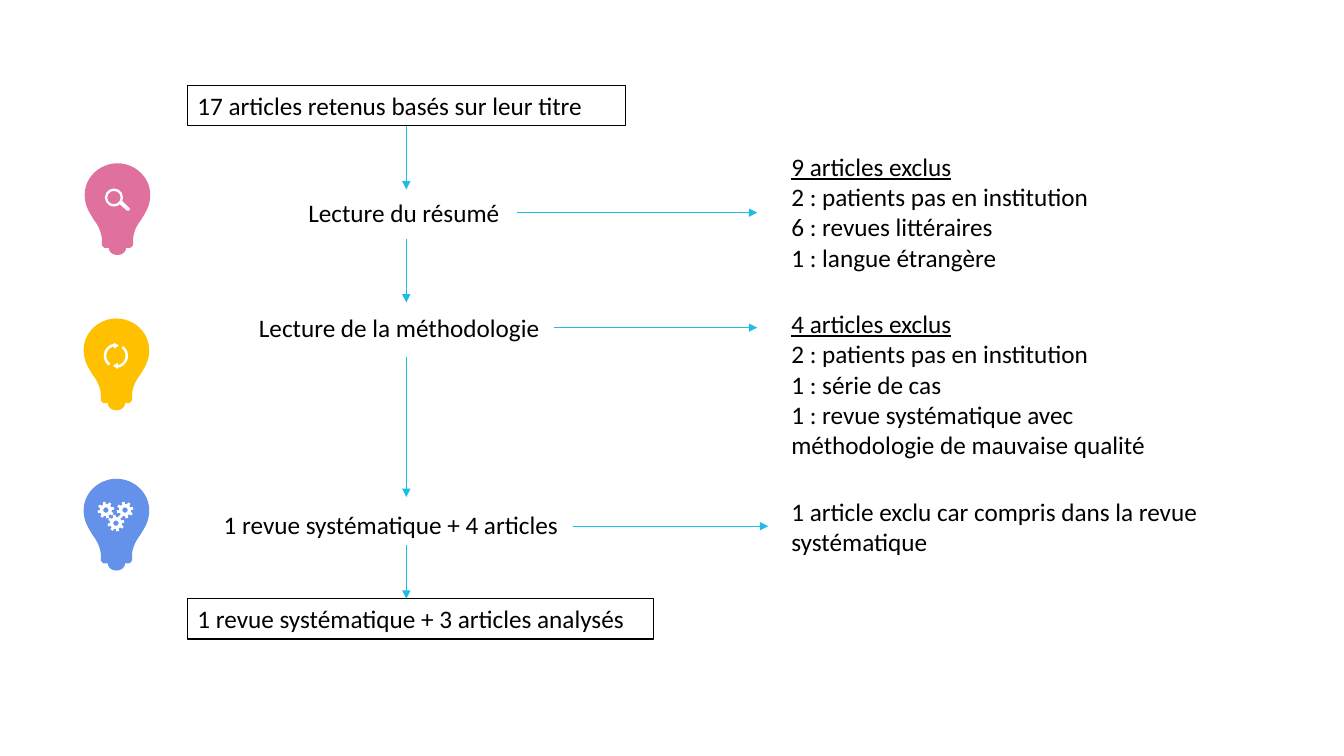
from dataclasses import dataclass
from math import cos, pi, radians, sin

from lxml import etree
from pptx import Presentation
from pptx import util as u
from pptx.dml.color import RGBColor
from pptx.enum import shapes, text
from pptx.oxml.ns import qn

PX = u.Inches(1) // 100


@dataclass(frozen=True)
class Theme:
    font: str = "Calibri"
    size: int = 18
    line_width: float = 0.75
    ink: str = "000000"
    arrow: str = "1CBEE4"
    icon: str = "FFFFFF"
    summary: str = "E0719E"
    method: str = "FFC000"
    result: str = "6491E9"


THEME = Theme()
RECTANGLE = shapes.MSO_SHAPE.RECTANGLE


def px(*lengths):
    return [u.Emu(round(length * PX)) for length in lengths]


def paint(shape, color):
    shape.shadow.inherit = False
    shape.fill.solid()
    shape.fill.fore_color.rgb = RGBColor.from_string(color)
    shape.line.fill.background()


def write(shape, wording, heading=False):
    """Fill a shape with left-aligned lines, underlining the first if it is a heading."""
    frame = shape.text_frame
    frame.word_wrap = True
    frame.auto_size = text.MSO_AUTO_SIZE.SHAPE_TO_FIT_TEXT
    frame.vertical_anchor = text.MSO_ANCHOR.TOP
    frame.text = wording
    for index, paragraph in enumerate(frame.paragraphs):
        paragraph.alignment = text.PP_ALIGN.LEFT
        for run in paragraph.runs:
            run.font.name = THEME.font
            run.font.size = u.Pt(THEME.size)
            run.font.color.rgb = RGBColor.from_string(THEME.ink)
            if heading and index == 0:
                run.font.underline = True


def add_label(slide, box, wording, heading=False):
    label = slide.shapes.add_textbox(*px(*box))
    write(label, wording, heading)
    return label


def add_framed_label(slide, box, wording):
    frame = slide.shapes.add_shape(RECTANGLE, *px(*box))
    frame.shadow.inherit = False
    frame.fill.background()
    frame.line.color.rgb = RGBColor.from_string(THEME.ink)
    frame.line.width = u.Pt(THEME.line_width)
    write(frame, wording)
    return frame


def add_arrow(slide, start, end, source=None, side=0):
    arrow = slide.shapes.add_connector(shapes.MSO_CONNECTOR.STRAIGHT, *px(*start, *end))
    if source is not None:
        arrow.begin_connect(source, side)
    arrow.line.color.rgb = RGBColor.from_string(THEME.arrow)
    arrow.line.width = u.Pt(THEME.line_width)
    etree.SubElement(arrow.line._get_or_add_ln(), qn("a:tailEnd"), type="triangle")
    etree.SubElement(arrow._element.spPr, qn("a:effectLst"))


def add_outline(parts, contours, color):
    """Draw closed contours as one shape; an inner contour cuts a hole."""
    contours = [[px(*point) for point in contour] for contour in contours]
    builder = parts.build_freeform(*contours[0][0])
    for index, contour in enumerate(contours):
        if index:
            builder.move_to(*contour[0])
        builder.add_line_segments(contour[1:], close=True)
    paint(builder.convert_to_shape(), color)


def curve(start, *triples, steps=12):
    """Sample a chain of cubic curves, each given as two controls and an end."""
    points = [start]
    for a, b, end in triples:
        for step in range(1, steps + 1):
            t = step / steps
            weights = ((1 - t) ** 3, 3 * t * (1 - t) ** 2, 3 * t * t * (1 - t), t ** 3)
            points.append(tuple(sum(w * p[axis] for w, p in zip(weights, (start, a, b, end)))
                                for axis in (0, 1)))
        start = end
    return points


def polar(cx, cy, radius, degrees):
    return cx + radius * cos(radians(degrees)), cy - radius * sin(radians(degrees))


def arc(cx, cy, radius, first, last, steps=24):
    return [polar(cx, cy, radius, first + (last - first) * n / steps) for n in range(steps + 1)]


def add_magnifier(slide, cx, cy):
    group = slide.shapes.add_group_shape()
    lens = group.shapes.add_shape(shapes.MSO_SHAPE.DONUT, *px(cx - 12, cy - 12, 18, 18))
    lens.adjustments[0] = 0.13
    paint(lens, THEME.icon)
    handle = [(4, 0), (2, 3), (10, 10), (12, 10), (13, 8), (5, 0)]
    add_outline(group.shapes, [[(cx + x, cy + y) for x, y in handle]], THEME.icon)


def add_cycle(slide, cx, cy):
    contours = []
    for turn in (0, 180):
        contours.append(arc(cx, cy, 12, 102 + turn, 234 + turn)
                        + arc(cx, cy, 9.5, 234 + turn, 102 + turn))
        sign = 1 if turn == 0 else -1
        contours.append([(cx + sign * x, cy + sign * y) for x, y in ((-2, -13), (-2, -7), (3, -10))])
    add_outline(slide.shapes, contours, THEME.icon)


def add_gears(slide, cx, cy, teeth=8):
    group = slide.shapes.add_group_shape()
    pitch = 360 / teeth
    for dx, dy in ((9, -6), (-10, -6), (0, 7)):
        x, y = cx + dx, cy + dy
        rim = [polar(x, y, radius, pitch * (tooth + share))
               for tooth in range(teeth)
               for radius, share in ((6, 0), (8.3, 0.08), (8.3, 0.5), (6, 0.58))]
        add_outline(group.shapes, [rim, arc(x, y, 2.6, 0, 345)], THEME.icon)


def add_bulb(slide, left, top, color, add_icon):
    middle = 32.5
    glass = curve((middle, 0), ((15, 0), (0, 14), (0, 31)),
                  ((0, 43), (5, 49), (9, 56)), ((13, 61), (16, 67), (17, 74)))
    cap = ([(17, 73)] + curve((17, 80), ((17, 82), (19, 84), (21, 84)))
           + curve((24, 84), ((24, 88), (28, 91), (middle, 91))))
    for half in (glass, cap):
        mirrored = [(2 * middle - x, y) for x, y in reversed(half)]
        add_outline(slide.shapes, [[(left + x, top + y) for x, y in half + mirrored]], color)
    add_icon(slide, left + 32, top + 37)


def add_selection_flow(slide, left, top):
    """Place the reading steps and the arrows that run down between them."""
    first = add_framed_label(slide, (left, top, 434, 40), "17 articles retenus basés sur leur titre")
    steps = [add_label(slide, (left + dx, top + dy, width, 40), wording)
             for dx, dy, width, wording in (
                 (110, 106, 217, "Lecture du résumé"),
                 (61, 220, 316, "Lecture de la méthodologie"),
                 (26, 415, 385, "1 revue systématique + 4 articles"))]
    add_framed_label(slide, (left, top + 509, 462, 40), "1 revue systématique + 3 articles analysés")
    axis = left + 217
    for start, end, source in ((40, 103, first), (152, 215, None),
                               (269, 408, None), (456, 509, None)):
        add_arrow(slide, (axis, top + start), (axis, top + end), source, 2)
    return steps


def add_exclusions(slide, left, top, summary_step):
    """Place the exclusion notes and the arrows that lead to them."""
    for dy, height, heading, wording in (
            (0, 131, True, "9 articles exclus\n2 : patients pas en institution\n"
                           "6 : revues littéraires\n1 : langue étrangère"),
            (156, 162, True, "4 articles exclus\n2 : patients pas en institution\n1 : série de cas\n"
                             "1 : revue systématique avec méthodologie de mauvaise qualité"),
            (342, 71, False, "1 article exclu car compris dans la revue systématique")):
        add_label(slide, (left, top + dy, 431, height), wording, heading)
    for start, end, dy, source in ((-262, -24, 66, summary_step), (-226, -24, 180, None),
                                   (-207, -13, 377, None)):
        add_arrow(slide, (left + start, top + dy), (left + end, top + dy), source, 3)


def main():
    deck = Presentation()
    deck.slide_width, deck.slide_height = px(1333, 750)
    slide = deck.slides.add_slide(deck.slide_layouts[6])
    steps = add_selection_flow(slide, 186, 85)
    add_exclusions(slide, 775, 145, steps[0])
    for left, top, color, icon in ((84, 162, THEME.summary, add_magnifier),
                                   (83, 316, THEME.method, add_cycle),
                                   (83, 475, THEME.result, add_gears)):
        add_bulb(slide, left, top, color, icon)
    deck.save("out.pptx")


if __name__ == "__main__":
    main()
